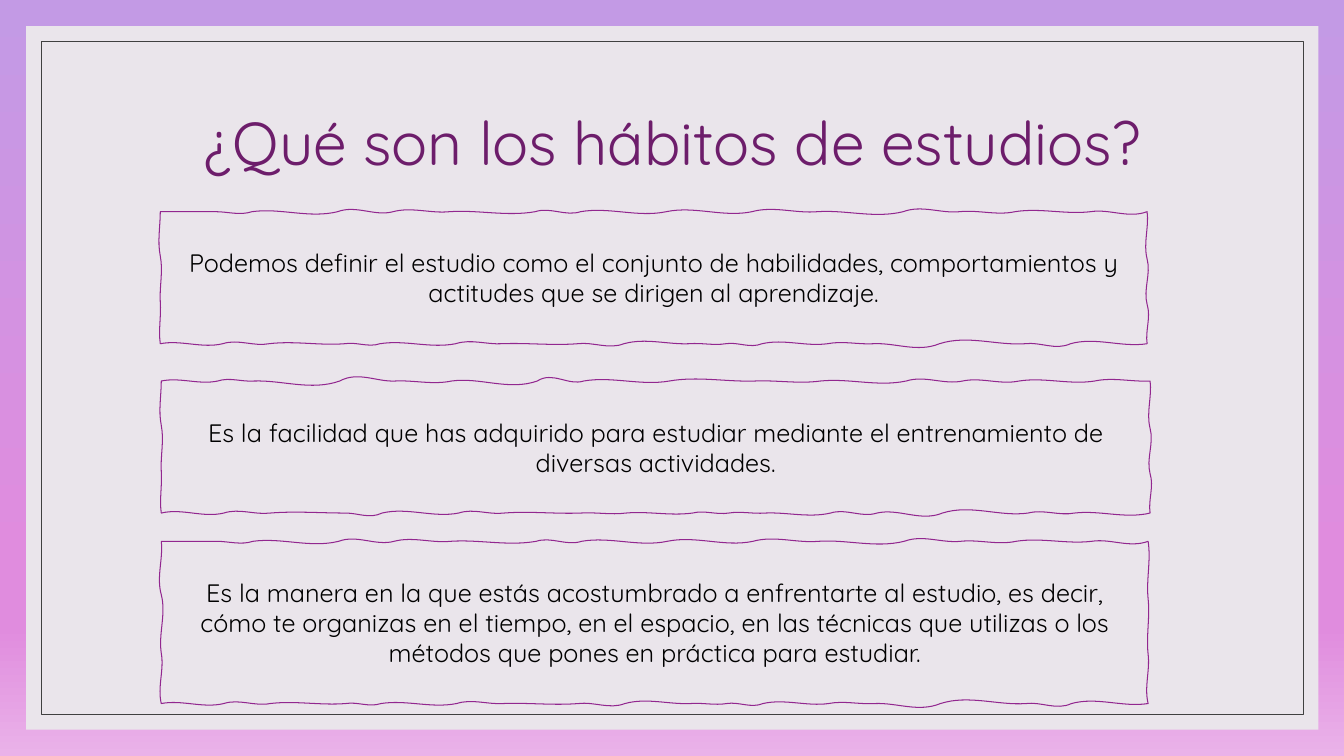
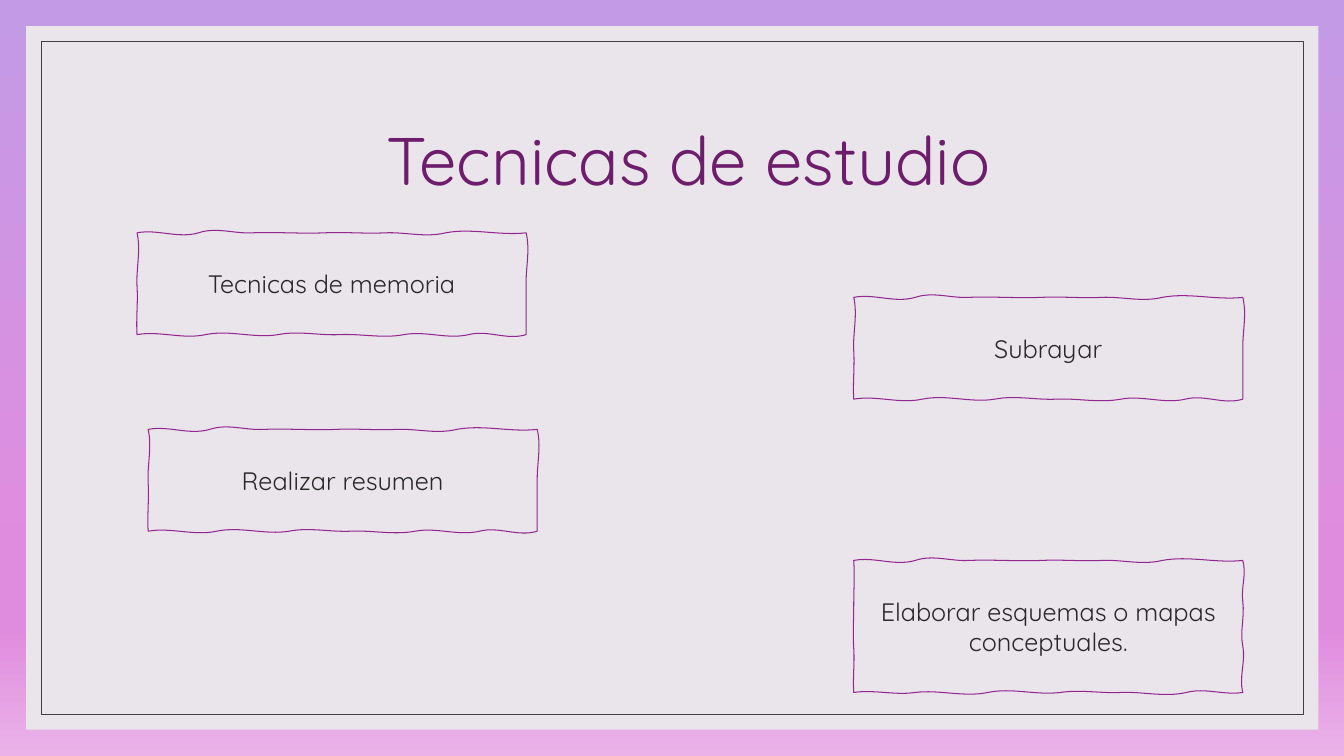
from dataclasses import dataclass
from typing import Iterator

from lxml import etree
from pptx import Presentation
from pptx import util as u
from pptx.dml.color import RGBColor
from pptx.enum import shapes, text
from pptx.oxml.ns import qn

PX = 9144

Wave = tuple[tuple[int, int], ...]
Point = tuple[float, float]
Curve = tuple[Point, Point, Point]


@dataclass(frozen=True)
class Theme:
    font: str = "Quicksand"
    panel: str = "EAE5EB"
    frame: str = "404040"
    title: str = "6D1D6B"
    sketch: str = "92278F"
    body: str = "000000"
    label: str = "282828"
    body_pt: float = 18
    frame_pt: float = 0.5
    sketch_pt: float = 0.75
    backdrop: tuple[tuple[int, str], ...] = (
        (0, "C39AE5"), (74, "E08CDE"), (83, "E08CDE"), (100, "EAB2E9"))


@dataclass(frozen=True)
class Outline:
    """Clockwise edges; each knot is (distance, sway of the curve handle)."""
    top: Wave
    right: Wave
    bottom: Wave
    left: Wave


@dataclass(frozen=True)
class Box:
    x: int
    y: int
    w: int
    h: int
    outline: Outline
    text: str


@dataclass(frozen=True)
class Page:
    title: str
    title_x: int
    title_y: int
    title_pt: float
    color: str
    boxes: tuple[Box, ...]


T = Theme()

WIDE_TOP: Wave = ((0, 0), (55, 0), (91, 4), (176, 7), (231, 5), (287, 2), (372, 5), (417, 5),
                  (502, 6), (587, 6), (652, 2), (737, 7), (793, 2), (848, 4), (923, 3), (979, 7))
WIDE_BOTTOM: Wave = ((0, -4), (76, -7), (121, -2), (206, -9), (271, -1), (317, -3), (382, -5),
                     (418, -2), (454, -1), (519, -6), (565, -2), (640, -1), (686, -5), (761, -4),
                     (796, -2), (871, -3), (917, -5), (979, -4))
WIDE_RIGHT: Wave = ((0, -2), (47, -4), (92, -4), (131, -2))
WIDE_LEFT: Wave = ((0, 2), (41, 1), (87, 3), (131, 0))
SMALL_TOP: Wave = ((0, 4), (61, 6), (114, 1), (186, 1), (246, 1), (306, 5), (386, 3))
SMALL_BOTTOM: Wave = ((0, -6), (57, -5), (121, -4), (185, -1), (246, -4), (318, -5), (386, -4))

WIDE = Outline(WIDE_TOP, WIDE_RIGHT, WIDE_BOTTOM, WIDE_LEFT)
WIDE_ALT = Outline(
    ((0, 4), (56, 4), (92, 1), (177, 10), (232, 1), (288, 4), (373, 10), (419, 5),
     (504, 5), (589, 1), (654, 3), (739, 6), (795, 4), (851, 4), (926, 4), (981, 1)),
    WIDE_RIGHT,
    ((0, -6), (75, -3), (121, -4), (206, -9), (271, -5), (317, -5), (382, -1), (418, -2),
     (454, -3), (520, -2), (565, -1), (641, -2), (686, -5), (762, -6), (798, 0), (873, -2),
     (919, -5), (981, -5)),
    WIDE_LEFT)
WIDE_TALL = Outline(WIDE_TOP, ((0, -3), (57, -2), (112, -2), (161, -4)),
                    WIDE_BOTTOM, ((0, 4), (50, 3), (108, 5), (161, 2)))
SMALL = Outline(SMALL_TOP, ((0, -4), (49, 0), (101, 0)),
                SMALL_BOTTOM, ((0, 1), (48, 1), (101, 4)))
SMALL_TALL = Outline(SMALL_TOP, ((0, -4), (41, -2), (85, -3), (131, -4)),
                     ((0, -3), (56, -5), (121, -1), (181, -3), (253, -5), (325, -3), (386, -3)),
                     ((0, 1), (44, 1), (86, 0), (131, 1)))

PAGES = (
    Page("¿Qué son los hábitos de estudios?", 117, 70, 43.2, T.body, (
        Box(159, 210, 979, 131, WIDE,
            "Podemos definir el estudio como el conjunto de habilidades, comportamientos y "
            "actitudes que se dirigen al aprendizaje."),
        Box(160, 378, 981, 131, WIDE_ALT,
            "Es la facilidad que has adquirido para estudiar mediante el entrenamiento de "
            "diversas actividades."),
        Box(160, 537, 979, 161, WIDE_TALL,
            "Es la manera en la que estás acostumbrado a enfrentarte al estudio, es decir, "
            "cómo te organizas en el tiempo, en el espacio, en las técnicas que utilizas o los "
            "métodos que pones en práctica para estudiar."),
    )),
    Page("Tecnicas de estudio", 133, 87, 48, T.label, (
        Box(136, 231, 386, 101, SMALL, "Tecnicas de memoria"),
        Box(847, 556, 386, 131, SMALL_TALL, "Elaborar esquemas o mapas conceptuales."),
        Box(147, 426, 386, 101, SMALL, "Realizar resumen"),
        Box(847, 295, 386, 101, SMALL, "Subrayar"),
    )),
)


def px(n: int) -> u.Emu:
    return u.Emu(n * PX)


def write(sp, content: str, *, size: float, color: str, spacing: float = 1.0) -> None:
    tf = sp.text_frame
    tf.word_wrap = True
    tf.auto_size = text.MSO_AUTO_SIZE.NONE
    tf.vertical_anchor = text.MSO_ANCHOR.MIDDLE
    p = tf.paragraphs[0]
    p.alignment = text.PP_ALIGN.CENTER
    p.line_spacing = spacing
    r = p.add_run()
    r.text = content
    r.font.name = T.font
    r.font.size = u.Pt(size)
    r.font.color.rgb = RGBColor.from_string(color)


def style(sp, *, fill: str | None = None, line: str | None = None, width: float = 0) -> None:
    sp.shadow.inherit = False
    if fill:
        sp.fill.solid()
        sp.fill.fore_color.rgb = RGBColor.from_string(fill)
    else:
        sp.fill.background()
    if line:
        sp.line.color.rgb = RGBColor.from_string(line)
        sp.line.width = u.Pt(width)
    else:
        sp.line.fill.background()


def edge_curves(wave: Wave) -> Iterator[Curve]:
    for (start, a), (end, b) in zip(wave, wave[1:]):
        third = (end - start) / 3
        yield (start + third, -a), (end - third, b), (end, 0)


def outline_curves(box: Box) -> list[Curve]:
    o, w, h = box.outline, box.w, box.h
    edges = (
        (o.top, lambda d, k: (d, k)),
        (o.right, lambda d, k: (w + k, d)),
        (o.bottom, lambda d, k: (w - d, h + k)),
        (o.left, lambda d, k: (k, h - d)),
    )
    return [tuple(place(*pt) for pt in curve)
            for wave, place in edges for curve in edge_curves(wave)]


def bend(sp, curves: list[Curve]) -> None:
    for segment, curve in zip(sp.element.xpath(".//a:lnTo"), curves):
        segment.tag = qn("a:cubicBezTo")
        for old in list(segment):
            segment.remove(old)
        for x, y in curve:
            etree.SubElement(segment, qn("a:pt"), x=str(round(x * PX)), y=str(round(y * PX)))


def add_box(s, box: Box, color: str) -> None:
    curves = outline_curves(box)
    fb = s.shapes.build_freeform(px(box.x), px(box.y), scale=1.0)
    fb.add_line_segments([(px(box.x + x), px(box.y + y)) for _, _, (x, y) in curves], close=True)
    sp = fb.convert_to_shape()
    bend(sp, curves)
    style(sp, line=T.sketch, width=T.sketch_pt)
    write(sp, box.text, size=T.body_pt, color=color)


def set_backdrop(master) -> None:
    fill = master.background.fill
    fill.gradient()
    fill.gradient_angle = 270
    stops = master.element.xpath(".//p:bg//a:gsLst")[0]
    for old in list(stops):
        stops.remove(old)
    for pos, color in T.backdrop:
        gs = etree.SubElement(stops, qn("a:gs"), pos=str(pos * 1000))
        etree.SubElement(gs, qn("a:srgbClr"), val=color)


def add_frame(s, master) -> None:
    rect = shapes.MSO_SHAPE.RECTANGLE
    panel = s.shapes.add_shape(rect, px(26), px(26), px(1282), px(698))
    style(panel, fill=T.panel)
    border = s.shapes.add_shape(rect, px(41), px(41), px(1252), px(668))
    style(border, line=T.frame, width=T.frame_pt)
    tree = master.element.xpath("./p:cSld/p:spTree")[0]
    for i, sp in enumerate((panel, border)):
        sp.element.xpath("./p:nvSpPr/p:cNvPr")[0].set("id", str(20 + i))
        tree.insert(2 + i, sp.element)


def add_title(s, page: Page) -> None:
    sp = s.shapes.title
    sp.left, sp.top, sp.width, sp.height = px(page.title_x), px(page.title_y), px(1100), px(150)
    write(sp, page.title, size=page.title_pt, color=T.title, spacing=0.9)


def main() -> None:
    prs = Presentation()
    prs.slide_width, prs.slide_height = u.Emu(12192000), px(750)
    layout = prs.slide_layouts.get_by_name("Title Only")
    slides = [prs.slides.add_slide(layout) for _ in PAGES]
    set_backdrop(prs.slide_master)
    add_frame(slides[0], prs.slide_master)
    for s, page in zip(slides, PAGES):
        add_title(s, page)
        for box in page.boxes:
            add_box(s, box, page.color)
    prs.save("out.pptx")


if __name__ == "__main__":
    main()
